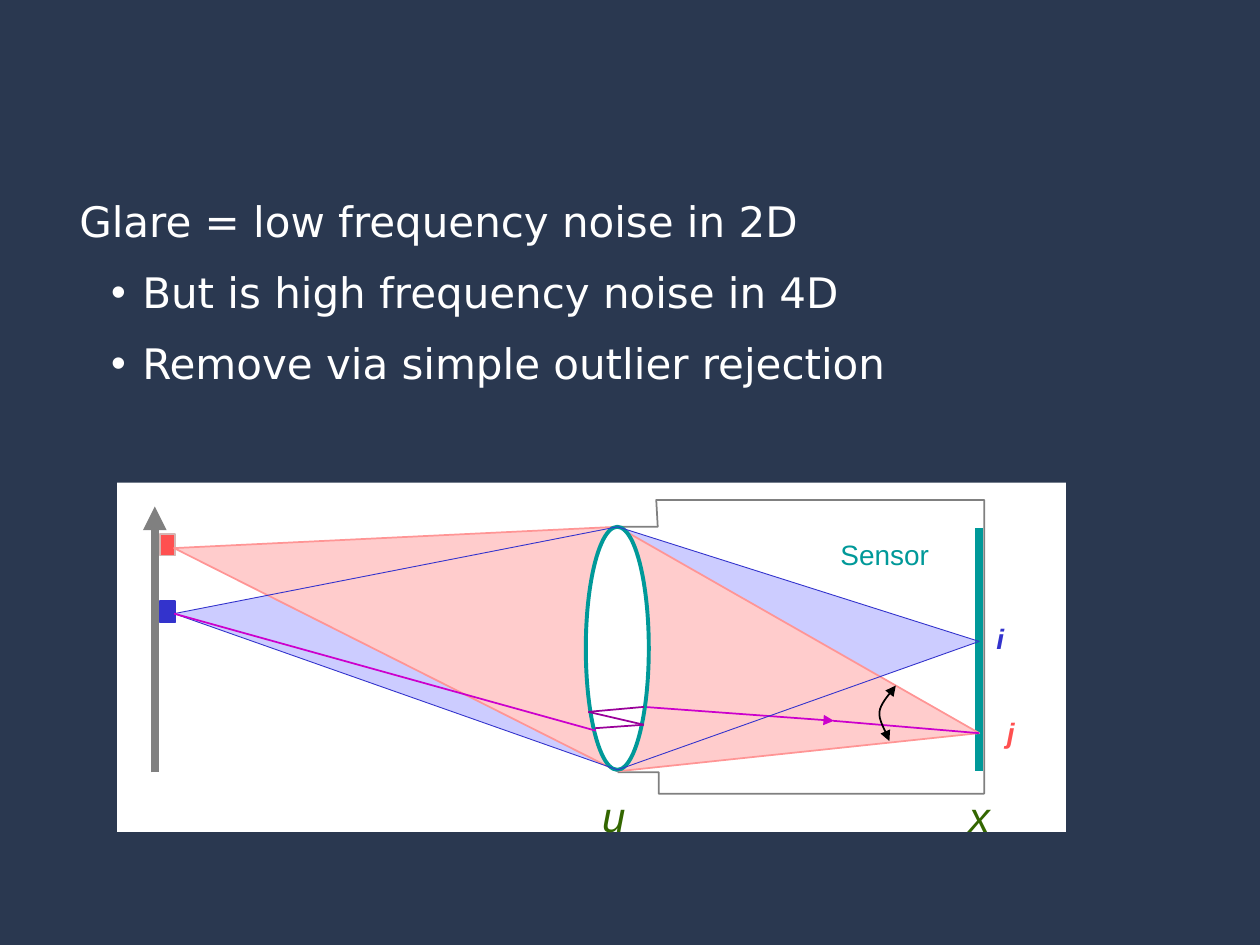
from pptx import Presentation
from pptx import util as u
from pptx.dml.color import RGBColor
from pptx.enum import shapes, text
from pptx.oxml.ns import qn
from lxml import etree

COLORS = {
    "background": "2A3850", "white": "FFFFFF", "black": "000000", "gray": "808080",
    "teal": "009999", "blue": "3333CC", "pale_blue": "CCCCFF", "red": "FF5050",
    "pale_red": "FFCCCC", "red_edge": "FF9595", "dull_red": "D4B6B4",
    "magenta": "CC00CC", "purple": "990099", "green": "336600",
}
LENS_TOP, LENS_BOTTOM = (12.45, 10.62), (12.45, 15.52)
BLUE_POINT, RED_POINT = (3.51, 12.37), (3.51, 11.05)
PIXEL_I, PIXEL_J = (19.74, 12.93), (19.74, 14.78)


def color(name):
    return RGBColor.from_string(COLORS[name])


def add_ends(shape, *ends):
    line = shape.line._get_or_add_ln()
    for end in ends:
        etree.SubElement(line, qn(f"a:{end}"), type="triangle")


def style(shape, fill=None, edge=None, width=1):
    shape.shadow.inherit = False
    if fill:
        shape.fill.solid()
        shape.fill.fore_color.rgb = color(fill)
    else:
        shape.fill.background()
    if edge:
        shape.line.color.rgb = color(edge)
        shape.line.width = u.Pt(width)
    else:
        shape.line.fill.background()


def add_preset(page, kind, place, fill, edge=None, width=1):
    shape = page.shapes.add_shape(kind, *map(u.Cm, place))
    style(shape, fill, edge, width)


def add_outline(page, points, fill=None, edge=None, closed=True):
    start, *rest = [(u.Cm(x), u.Cm(y)) for x, y in points]
    builder = page.shapes.build_freeform(*start, scale=1.0)
    builder.add_line_segments(rest, close=closed)
    shape = builder.convert_to_shape()
    style(shape, fill, edge)
    return shape


def add_line(page, start, end, name, width=1, arrow=False):
    line = page.shapes.add_connector(
        shapes.MSO_CONNECTOR.STRAIGHT, *map(u.Cm, (*start, *end)))
    line.line.color.rgb = color(name)
    line.line.width = u.Pt(width)
    if arrow:
        add_ends(line, "tailEnd")
    etree.SubElement(line._element.spPr, qn("a:effectLst"))


def add_run(para, words, name, size, font, bold=False, italic=False):
    span = para.add_run()
    span.text = words
    span.font.name = font
    span.font.size = u.Pt(size)
    span.font.color.rgb = color(name)
    span.font.bold = bold
    span.font.italic = italic


def add_label(page, words, place, name, size=16, bold=False, italic=True, centered=True):
    frame = page.shapes.add_textbox(*map(u.Cm, place)).text_frame
    frame.word_wrap = centered
    if not centered:
        frame.margin_left = frame.margin_right = u.Cm(0.33)
        frame.margin_top = frame.margin_bottom = u.Cm(0.18)
    para = frame.paragraphs[0]
    para.alignment = text.PP_ALIGN.CENTER if centered else text.PP_ALIGN.LEFT
    add_run(para, words, name, size, "Arial", bold, italic)


def add_bullet(para):
    para.level = 1
    props = para._p.get_or_add_pPr()
    props.set("marL", str(u.Cm(1.27)))
    props.set("indent", str(u.Cm(-0.63)))
    etree.SubElement(props, qn("a:buFont"), typeface="Arial")
    etree.SubElement(props, qn("a:buChar"), char="•")


def add_body(page, heading, points):
    frame = page.shapes.add_textbox(*map(u.Cm, (1.35, 3.81, 23.34, 4.37))).text_frame
    frame.word_wrap = True
    add_run(frame.paragraphs[0], heading, "white", 24, "DejaVu Sans")
    for point in points:
        para = frame.add_paragraph()
        para.space_before = u.Pt(12)
        add_bullet(para)
        add_run(para, point, "white", 24, "DejaVu Sans")


def curve(a, b, c, d, steps=10):
    for step in range(steps + 1):
        t = step / steps
        s = 1 - t
        yield tuple(s**3 * p + 3 * s * s * t * q + 3 * s * t * t * r + t**3 * v
                    for p, q, r, v in zip(a, b, c, d))


def add_scene(page):
    rectangle = shapes.MSO_SHAPE.RECTANGLE
    add_preset(page, rectangle, (2.36, 9.73, 19.13, 7.04), "white")
    for tip in (BLUE_POINT, PIXEL_I):
        add_outline(page, [tip, LENS_TOP, LENS_BOTTOM], "pale_blue")
    add_line(page, (19.74, 10.64), (19.74, 15.54), "teal", 4.5)
    add_preset(page, rectangle, (3.23, 12.12, 0.3, 0.43), "blue", "blue")
    add_line(page, (3.12, 15.57), (3.12, 10.21), "gray", 4.5, arrow=True)
    add_outline(page, [(12.42, 10.62), (13.26, 10.62), (13.23, 10.08), (19.84, 10.08),
                       (19.84, 16), (13.28, 16), (13.28, 15.57), (12.45, 15.57)],
                edge="gray", closed=False)
    add_preset(page, rectangle, (3.23, 10.77, 0.3, 0.43), "red", "dull_red")
    for tip in (PIXEL_J, RED_POINT):
        add_outline(page, [tip, LENS_TOP, (12.45, 15.55)], "pale_red", "red_edge")


def add_rays(page):
    add_line(page, (12.98, 14.25), (16.81, 14.53), "magenta", arrow=True)
    add_preset(page, shapes.MSO_SHAPE.OVAL, (11.81, 10.62, 1.27, 4.9),
               "white", "teal", 2.25)
    bounces = [(11.99, 14.68), (12.98, 14.61), (11.86, 14.35), (12.98, 14.25)]
    for start, end in zip(bounces, bounces[1:]):
        add_line(page, start, end, "purple")
    add_line(page, (16.79, 14.53), PIXEL_J, "magenta")
    middle = (17.73, 14.35)
    lower = list(curve((17.93, 14.94), (17.91, 14.83), (17.7, 14.53), middle))
    upper = list(curve(middle, (17.75, 14.17), (17.98, 13.94), (18.06, 13.82)))
    arc = add_outline(page, lower + upper[1:], edge="black", closed=False)
    add_ends(arc, "headEnd", "tailEnd")
    for tip in (PIXEL_I, BLUE_POINT):
        for edge in (LENS_TOP, LENS_BOTTOM):
            add_line(page, tip, edge, "blue", 0.5)
    add_line(page, BLUE_POINT, (12.01, 14.73), "magenta")


def add_labels(page):
    add_label(page, "i", (19.63, 12.4, 1.07, 0.94), "blue", bold=True)
    add_label(page, "j", (19.84, 14.3, 1.07, 0.94), "red", bold=True)
    add_label(page, "Sensor", (16.03, 10.72, 3.61, 0.94), "teal", italic=False)
    for words, left, width in (("x", 19.2, 0.74), ("u", 11.81, 0.84)):
        add_label(page, words, (left, 15.75, width, 1.09), "green", 24, centered=False)


def main():
    deck = Presentation()
    deck.slide_width, deck.slide_height = u.Cm(25.4), u.Cm(19.05)
    page = deck.slides.add_slide(deck.slide_layouts[6])
    page.background.fill.solid()
    page.background.fill.fore_color.rgb = color("background")
    add_scene(page)
    add_rays(page)
    add_labels(page)
    add_body(page, "Glare = low frequency noise in 2D",
             ["But is high frequency noise in 4D", "Remove via simple outlier rejection"])
    deck.save("out.pptx")


if __name__ == "__main__":
    main()
